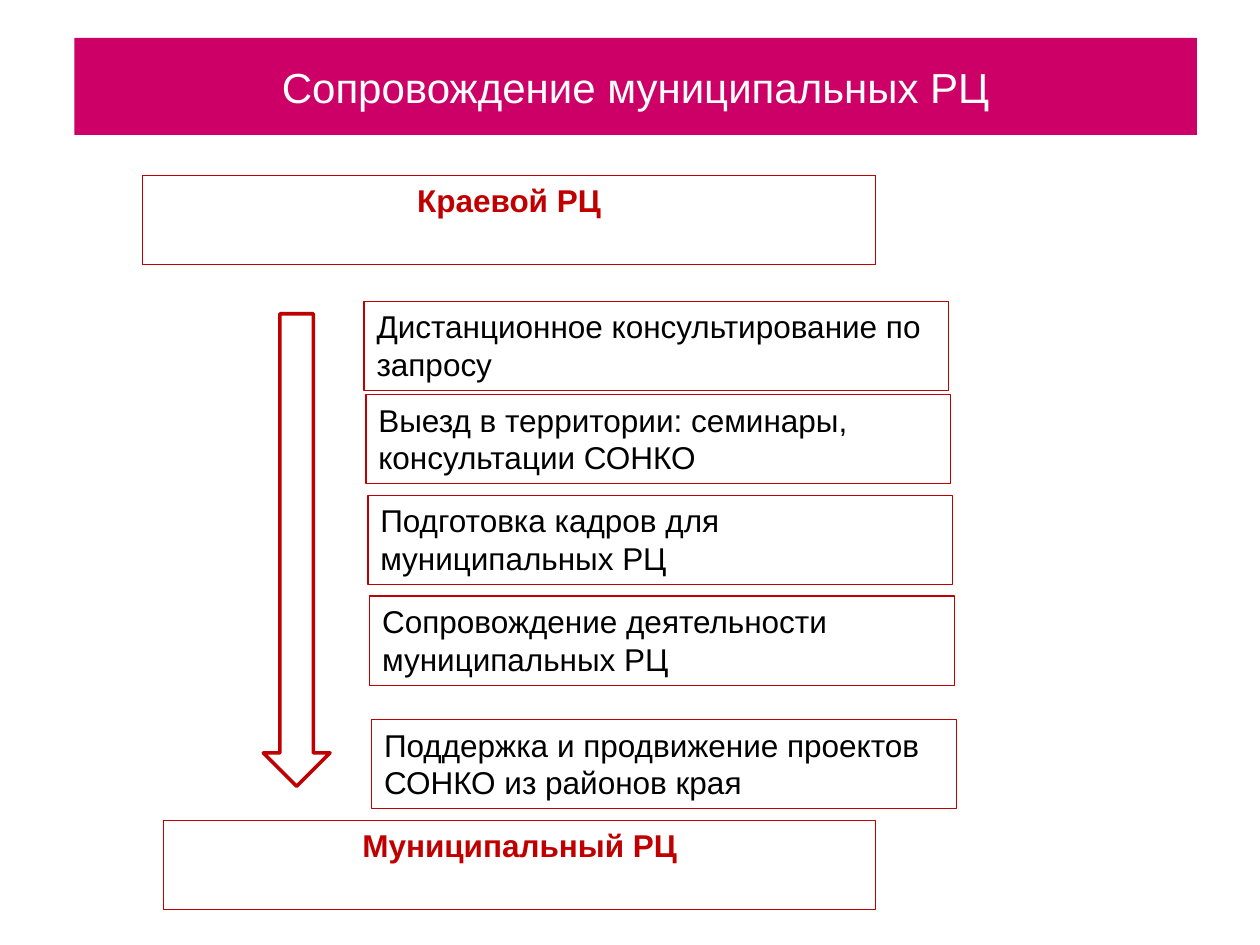
from pptx import Presentation
from pptx.dml.color import RGBColor
from pptx.enum.shapes import MSO_SHAPE
from pptx.enum.text import MSO_ANCHOR, MSO_AUTO_SIZE, PP_ALIGN
from pptx.util import Inches, Pt

PINK = RGBColor(0xCC, 0x00, 0x66)
RED = RGBColor(0xC0, 0x00, 0x00)
BLACK = RGBColor(0x00, 0x00, 0x00)
WHITE = RGBColor(0xFF, 0xFF, 0xFF)

# Grid of 100 columns by 75 rows
COLS, ROWS = 100, 75
BOX_ROWS = 7.1
STEPS = [
    (23.9, "Дистанционное консультирование по запросу"),
    (31.3, "Выезд в территории: семинары, консультации СОНКО"),
    (39.3, "Подготовка кадров для муниципальных РЦ"),
    (47.3, "Сопровождение деятельности муниципальных РЦ"),
    (57.1, "Поддержка и продвижение проектов СОНКО из районов края"),
]


class Deck:
    font = "Arial"

    def __init__(self):
        self.prs = Presentation()
        self.prs.slide_width = Inches(10)
        self.prs.slide_height = Inches(7.5)
        self.slide = self.prs.slides.add_slide(self.prs.slide_layouts[5])

    def area(self, col, row, cols, rows):
        wide = self.prs.slide_width / COLS
        high = self.prs.slide_height / ROWS
        return [round(n) for n in
                (col * wide, row * high, cols * wide, rows * high)]

    def label(self, shape, text, size, color, align, anchor, bold=False):
        frame = shape.text_frame
        frame.text = text
        frame.word_wrap = True
        frame.auto_size = MSO_AUTO_SIZE.NONE
        frame.vertical_anchor = anchor
        para = frame.paragraphs[0]
        para.alignment = align
        font = para.runs[0].font
        font.name, font.size, font.bold = self.font, Pt(size), bold
        font.color.rgb = color

    def title(self, text, *cells):
        shape = self.slide.shapes.title
        shape.left, shape.top, shape.width, shape.height = self.area(*cells)
        shape.fill.solid()
        shape.fill.fore_color.rgb = PINK
        self.label(shape, text, 24, WHITE, PP_ALIGN.CENTER, MSO_ANCHOR.MIDDLE)

    def frame(self, kind, weight, *cells):
        shape = self.slide.shapes.add_shape(kind, *self.area(*cells))
        shape.shadow.inherit = False
        shape.fill.background()
        shape.line.color.rgb = RED
        shape.line.width = Pt(weight)
        return shape

    def box(self, text, col, row, cols, head=False):
        shape = self.frame(MSO_SHAPE.RECTANGLE, 0.75, col, row, cols, BOX_ROWS)
        color = RED if head else BLACK
        align = PP_ALIGN.CENTER if head else PP_ALIGN.LEFT
        self.label(shape, text, 18, color, align, MSO_ANCHOR.TOP, head)

    def arrow(self, *cells):
        self.frame(MSO_SHAPE.DOWN_ARROW, 2, *cells)


def main():
    deck = Deck()
    deck.title("Сопровождение муниципальных РЦ", 5.9, 3, 89.1, 7.7)

    # Regional and municipal centres
    deck.box("Краевой РЦ", 11.3, 13.9, 58.2, head=True)
    deck.box("Муниципальный РЦ", 13, 65.1, 56.5, head=True)

    # Kinds of support between them, each a little further right
    deck.arrow(20.9, 24.9, 5.3, 37.5)
    for i, (row, text) in enumerate(STEPS):
        deck.box(text, 28.9 + 0.15 * i, row, 46.4)

    deck.prs.save("out.pptx")


if __name__ == "__main__":
    main()
